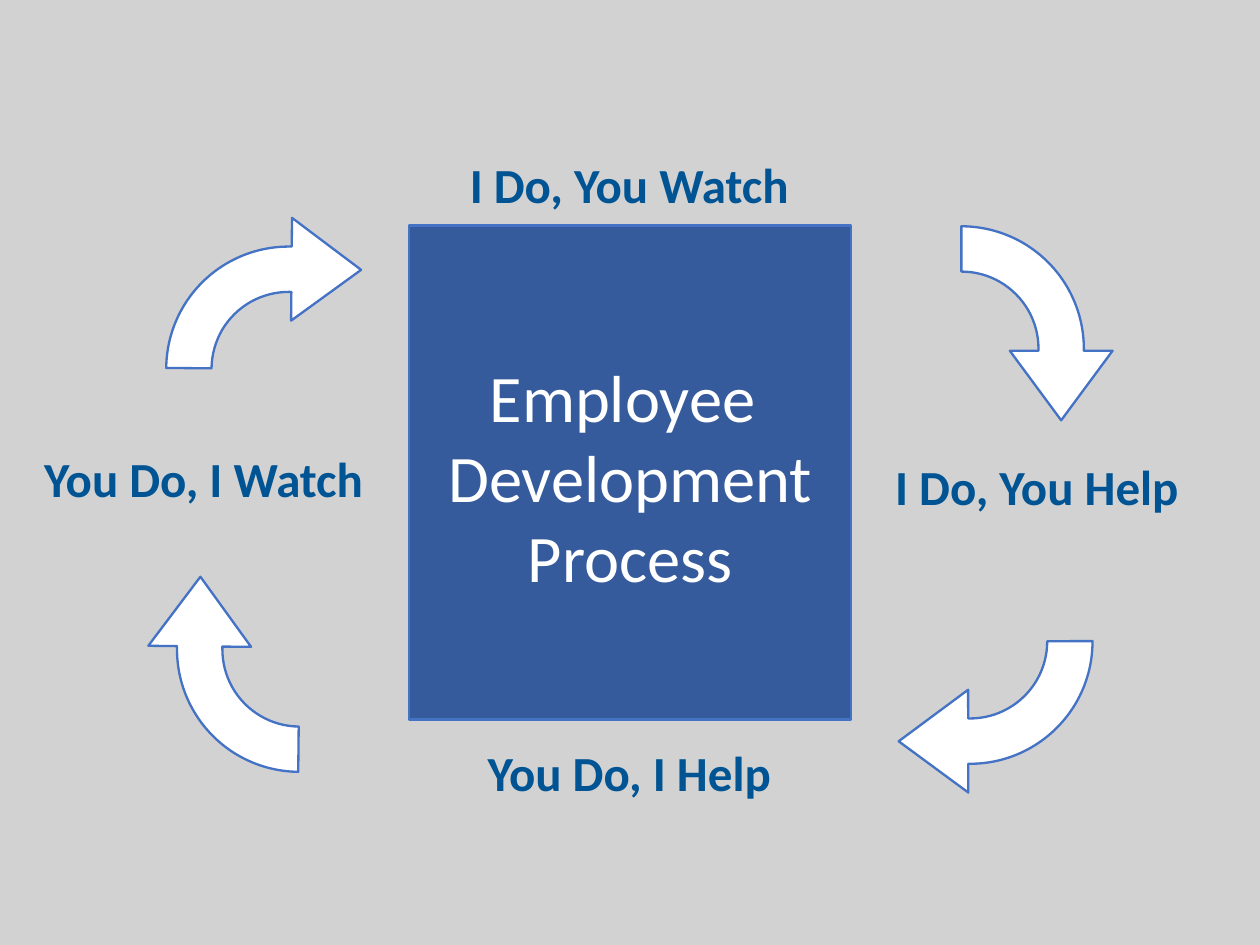
from dataclasses import dataclass

from pptx import Presentation
from pptx.dml.color import RGBColor
from pptx.enum.shapes import MSO_SHAPE as Preset
from pptx.enum.text import MSO_ANCHOR as Anchor, MSO_AUTO_SIZE as AutoSize, PP_ALIGN as Align
from pptx.shapes.autoshape import Shape
from pptx.slide import Slide
from pptx.util import Inches, Pt

SLIDE_W = Inches(7.5)
SLIDE_H = SLIDE_W * 3 // 4
GRAY, NAVY, BLUE, TEAL, WHITE = "D2D2D2", "365B9D", "4472C4", "005493", "FFFFFF"
INSET = Inches(0.04)
LABEL_SIZE, ARROW_SIZE, PANEL_SIZE = (27, 7.65), (15.4, 16), (35.1, 52.3)
ARROW_BEND = (0.3, 0.34, 0.46, 0.81)
LABEL_FONT = {"name": "Calibri", "size": Pt(21), "bold": True}
TITLE_FONT = {"name": "Calibri", "size": Pt(28.5), "bold": False}


@dataclass(frozen=True)
class Step:
    """A label and the arrow leading on from it; centres in percent of the slide."""
    label: str
    label_center: tuple[float, float]
    arrow_center: tuple[float, float]
    arrow_turn: float


STEPS = (
    Step("I Do, You Watch", (49.95, 19.45), (82.3, 34.22), 90),
    Step("I Do, You Help", (82.3, 51.4), (79.02, 75.86), 179.9),
    Step("You Do, I Help", (49.95, 81.65), (17.75, 71.33), 270.6),
    Step("You Do, I Watch", (16.17, 50.55), (20.95, 31.03), 0.5),
)


def color(hex_code: str) -> RGBColor:
    return RGBColor.from_string(hex_code)


def box(center: tuple[float, float], size: tuple[float, float]) -> tuple[int, int, int, int]:
    """Turn a centre and size in percent into left, top, width and height."""
    (x, y), (w, h) = center, size
    return (int(SLIDE_W * (x - w / 2) / 100), int(SLIDE_H * (y - h / 2) / 100),
            int(SLIDE_W * w / 100), int(SLIDE_H * h / 100))


def paint(shape: Shape, fill: str) -> None:
    shape.fill.solid()
    shape.fill.fore_color.rgb = color(fill)
    shape.line.color.rgb = color(BLUE)
    shape.line.width = Pt(1)
    shape.shadow.inherit = False


def write(shape: Shape, text: str, font: dict, ink: str, **frame_format) -> None:
    frame = shape.text_frame
    frame.text = text
    settings = {"margin_left": INSET, "margin_right": INSET, "margin_top": INSET,
                "margin_bottom": INSET, "word_wrap": False,
                "auto_size": AutoSize.NONE, "vertical_anchor": Anchor.MIDDLE}
    for key, value in (settings | frame_format).items():
        setattr(frame, key, value)
    paragraph = frame.paragraphs[0]
    paragraph.alignment = Align.CENTER
    for run in paragraph.runs:
        for key, value in font.items():
            setattr(run.font, key, value)
        run.font.color.rgb = color(ink)


def place_title(slide: Slide) -> None:
    title = slide.shapes.title
    title.left, title.top, title.width, title.height = box((50, 50), PANEL_SIZE)
    paint(title, NAVY)
    write(title, "Employee \vDevelopment\vProcess", TITLE_FONT, WHITE,
          margin_top=Inches(0.08))


def draw_step(slide: Slide, step: Step) -> None:
    label = slide.shapes.add_textbox(*box(step.label_center, LABEL_SIZE))
    write(label, step.label, LABEL_FONT, TEAL)
    arrow = slide.shapes.add_shape(Preset.BENT_ARROW, *box(step.arrow_center, ARROW_SIZE))
    for index, share in enumerate(ARROW_BEND):
        arrow.adjustments[index] = share
    arrow.rotation = step.arrow_turn
    paint(arrow, WHITE)


def main() -> None:
    deck = Presentation()
    deck.slide_width, deck.slide_height = SLIDE_W, SLIDE_H
    slide = deck.slides.add_slide(deck.slide_layouts.get_by_name("Title Only"))
    slide.background.fill.solid()
    slide.background.fill.fore_color.rgb = color(GRAY)
    place_title(slide)
    for step in STEPS:
        draw_step(slide, step)
    deck.save("out.pptx")


if __name__ == "__main__":
    main()
